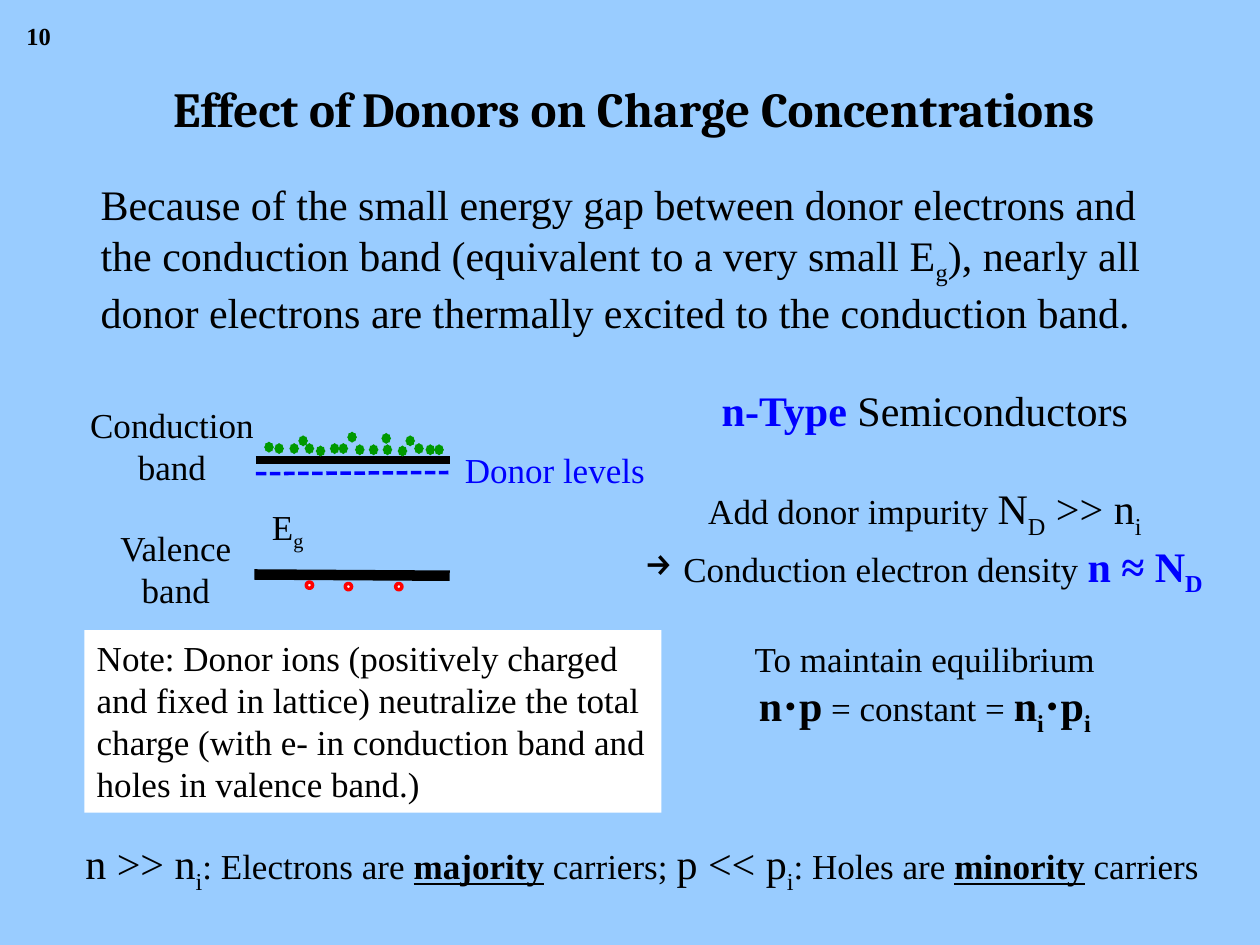
from dataclasses import dataclass
from typing import NamedTuple

from lxml import etree
from pptx import Presentation
from pptx import util as u
from pptx.dml.color import RGBColor
from pptx.enum import dml, shapes, text
from pptx.oxml.ns import qn

COLORS = {
    "sky": "99CCFF",
    "black": "000000",
    "number": "020100",
    "white": "FFFFFF",
    "blue": "0000FF",
    "green": "009900",
    "red": "FF0000",
}
BODY_FONT = "Times New Roman"
TITLE_FONT = "Cambria"


class Span(NamedTuple):
    text: str
    size: float = 20
    color: str = "black"
    bold: bool = False
    underline: bool = False
    subscript: bool = False
    font: str = BODY_FONT


class Line(NamedTuple):
    spans: list[Span]
    space_before: float = 0
    bullet: str = ""


class Spot(NamedTuple):
    left: float
    top: float


@dataclass
class TextBlock:
    left: float
    top: float
    width: float
    height: float
    lines: list[Line]
    centered: bool = False
    wrap: bool = False
    middle: bool = False
    line_spacing: float | None = None
    fill: str = ""


@dataclass
class Level:
    """A horizontal line of the energy diagram."""
    start: Spot
    end: Spot
    color: str
    weight: float
    dashed: bool = False


@dataclass
class Carrier:
    """The look shared by all carriers of one kind."""
    preset: shapes.MSO_SHAPE
    width: float
    height: float
    fill: str
    outline: str


def rgb(name: str) -> RGBColor:
    return RGBColor.from_string(COLORS[name])


def plain_lines(texts: list[str], size: float = 20, color: str = "black") -> list[Line]:
    return [Line([Span(content, size, color)]) for content in texts]


def sub(content: str, size: float = 24, color: str = "black", bold: bool = False) -> Span:
    return Span(content, size, color, bold, subscript=True)


def fill_paragraph(paragraph, line: Line) -> None:
    if line.bullet:
        bullet = etree.SubElement(paragraph._p.get_or_add_pPr(), qn("a:buChar"))
        bullet.set("char", line.bullet)
    if line.space_before:
        paragraph.space_before = u.Pt(line.space_before)
    for span in line.spans:
        run = paragraph.add_run()
        run.text = span.text
        font = run.font
        font.name = span.font
        font.size = u.Pt(span.size)
        font.bold = span.bold
        font.underline = span.underline
        font.color.rgb = rgb(span.color)
        if span.subscript:
            run._r.get_or_add_rPr().set("baseline", "-25000")


def draw_text(slide, block: TextBlock) -> None:
    box = slide.shapes.add_textbox(
        u.Pt(block.left), u.Pt(block.top), u.Pt(block.width), u.Pt(block.height))
    if block.fill:
        box.fill.solid()
        box.fill.fore_color.rgb = rgb(block.fill)
    frame = box.text_frame
    frame.word_wrap = block.wrap
    if block.middle:
        frame.vertical_anchor = text.MSO_ANCHOR.MIDDLE
    else:
        frame.auto_size = text.MSO_AUTO_SIZE.SHAPE_TO_FIT_TEXT
    for index, line in enumerate(block.lines):
        paragraph = frame.add_paragraph() if index else frame.paragraphs[0]
        fill_paragraph(paragraph, line)
        if block.centered:
            paragraph.alignment = text.PP_ALIGN.CENTER
        if block.line_spacing:
            paragraph.line_spacing = block.line_spacing


def draw_level(slide, level: Level) -> None:
    connector = slide.shapes.add_connector(
        shapes.MSO_CONNECTOR.STRAIGHT,
        u.Pt(level.start.left), u.Pt(level.start.top),
        u.Pt(level.end.left), u.Pt(level.end.top))
    connector.line.color.rgb = rgb(level.color)
    connector.line.width = u.Pt(level.weight)
    if level.dashed:
        connector.line.dash_style = dml.MSO_LINE.SQUARE_DOT
    etree.SubElement(connector._element.spPr, qn("a:effectLst"))


def draw_carriers(slide, carrier: Carrier, spots: list[Spot]) -> None:
    for spot in spots:
        shape = slide.shapes.add_shape(
            carrier.preset, u.Pt(spot.left), u.Pt(spot.top),
            u.Pt(carrier.width), u.Pt(carrier.height))
        shape.shadow.inherit = False
        shape.fill.solid()
        shape.fill.fore_color.rgb = rgb(carrier.fill)
        shape.line.color.rgb = rgb(carrier.outline)
        shape.line.width = u.Pt(2)


TITLE = "Effect of Donors on Charge Concentrations"
HEADINGS = [
    TextBlock(8, 8.6, 30, 24, [Line([Span("10", 14, "number", True)])]),
    TextBlock(34, 34, 656.5, 60, [Line([Span(TITLE, 28, bold=True, font=TITLE_FONT)])],
              centered=True, wrap=True, middle=True, line_spacing=0.9),
    TextBlock(50.4, 98.6, 620.6, 94.3, [
        *plain_lines(["Because of the small energy gap between donor electrons and"], 24),
        Line([Span("the conduction band (equivalent to a very small E", 24), sub("g"),
              Span("), nearly all", 24)]),
        *plain_lines(["donor electrons are thermally excited to the conduction band."], 24),
    ]),
]

LEVELS = [
    Level(Spot(145.4, 328.3), Spot(257, 329), "black", 6),
    Level(Spot(146.2, 262.8), Spot(257, 262.8), "black", 4.5),
    Level(Spot(146.2, 270.7), Spot(256.3, 270), "blue", 2, dashed=True),
]
ELECTRON = Carrier(shapes.MSO_SHAPE.SUN, 3.6, 4.3, "green", "green")
ELECTRON_SPOTS = [Spot(*place) for place in [
    (151.9, 253.4), (157.7, 254.2), (166.3, 254.2), (175, 254.2), (181.4, 255.6),
    (189.4, 254.2), (194.4, 254.2), (203.8, 254.9), (211.7, 254.9), (219.6, 254.9),
    (228.2, 255.6), (237.6, 254.2), (244.1, 254.9), (249.1, 254.9),
    (171.4, 249.8), (199.4, 247.7), (232.6, 249.8), (218.9, 248.4)]]
HOLE = Carrier(shapes.MSO_SHAPE.OVAL, 3.6, 3.6, "white", "red")
HOLE_SPOTS = [Spot(175, 332.6), Spot(197.3, 333.4), Spot(226.1, 333.4)]

DIAGRAM_LABELS = [
    TextBlock(148.3, 285.1, 33.8, 31.7, [Line([Span("E"), sub("g", 20)])]),
    TextBlock(43.9, 226.8, 108.7, 55.4, plain_lines(["Conduction", "band"]), centered=True),
    TextBlock(61.2, 297.4, 78.5, 55.4, plain_lines(["Valence", "band"]), centered=True),
    TextBlock(258.5, 252.7, 118, 31.7, plain_lines(["Donor levels"], color="blue")),
]

EXPLANATIONS = [
    TextBlock(358.6, 216, 339.8, 200.9, [
        Line([Span("n-Type", 24, "blue", True), Span(" Semiconductors", 24)]),
        Line([Span("Add donor impurity "), Span("N", 24), sub("D"),
              Span(" >> n", 24), sub("i")], space_before=27.6),
        Line([Span(" Conduction electron density "), Span("n ≈ N", 24, "blue", True),
              sub("D", color="blue", bold=True)], bullet="→"),
        Line([Span("To maintain equilibrium")], space_before=23),
        Line([Span("n⋅p", 24, bold=True), Span(" = constant = "),
              Span("n", 24, bold=True), sub("i", bold=True),
              Span("⋅p", 24, bold=True), sub("i", bold=True)]),
    ], centered=True),
    TextBlock(38.9, 475.2, 655.9, 36, [
        Line([Span("n >> n", 24), sub("i"), Span(": Electrons are "),
              Span("majority", bold=True, underline=True), Span(" carriers; "),
              Span("p << p", 24), sub("i"), Span(": Holes are "),
              Span("minority", bold=True, underline=True), Span(" carriers")]),
    ], centered=True, wrap=True),
    TextBlock(48.2, 360, 329.8, 104.4, plain_lines([
        "Note: Donor ions (positively charged",
        "and fixed in lattice) neutralize the total",
        "charge (with e- in conduction band and",
        "holes in valence band.)"]), fill="white"),
]


def main() -> None:
    presentation = Presentation()
    presentation.slide_width, presentation.slide_height = u.Pt(720), u.Pt(540)
    slide = presentation.slides.add_slide(presentation.slide_layouts[6])
    slide.background.fill.solid()
    slide.background.fill.fore_color.rgb = rgb("sky")
    for level in LEVELS:
        draw_level(slide, level)
    draw_carriers(slide, ELECTRON, ELECTRON_SPOTS)
    draw_carriers(slide, HOLE, HOLE_SPOTS)
    for block in HEADINGS + DIAGRAM_LABELS + EXPLANATIONS:
        draw_text(slide, block)
    presentation.save("out.pptx")


if __name__ == "__main__":
    main()
